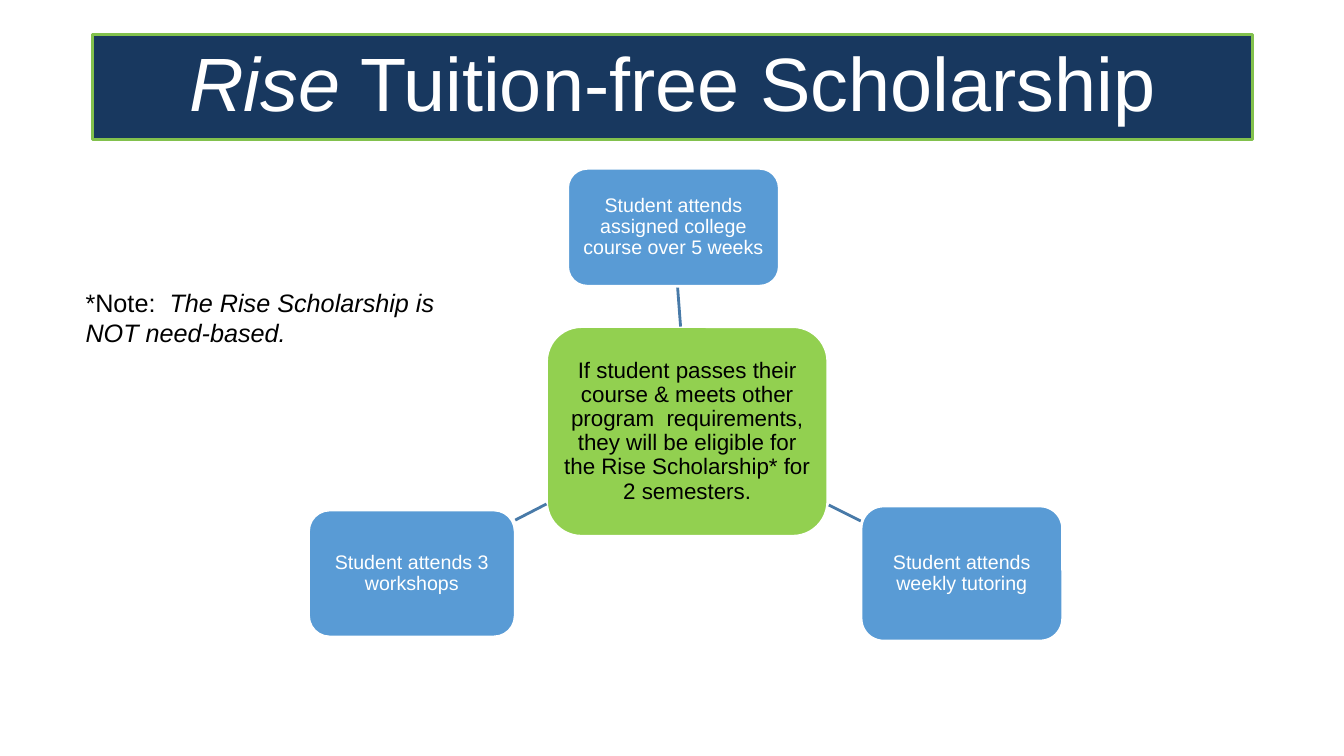
from lxml import etree
from pptx import Presentation
from pptx.dml.color import RGBColor
from pptx.enum.shapes import MSO_CONNECTOR, MSO_SHAPE
from pptx.enum.text import MSO_ANCHOR, MSO_AUTO_SIZE, PP_ALIGN
from pptx.oxml.ns import qn
from pptx.util import Inches, Pt

COLORS = {"navy": "18385F", "leaf": "82C14D", "green": "92D050", "blue": "599BD5",
          "link": "487AA8", "white": "FFFFFF", "black": "000000"}


def rgb(name):
    return RGBColor.from_string(COLORS[name])


def paint(sp, fill, line, width):
    sp.fill.solid()
    sp.fill.fore_color.rgb = rgb(fill)
    sp.line.color.rgb = rgb(line)
    sp.line.width = Pt(width)


def set_frame(tf, inset_x, inset_y, anchor):
    values = {"word_wrap": True, "auto_size": MSO_AUTO_SIZE.NONE, "vertical_anchor": anchor,
              "margin_left": Inches(inset_x), "margin_right": Inches(inset_x),
              "margin_top": Inches(inset_y), "margin_bottom": Inches(inset_y)}
    for name, value in values.items():
        setattr(tf, name, value)


def write(p, runs, size, color, **paragraph_format):
    """Fill a paragraph with (text, italic) runs."""
    for name, value in paragraph_format.items():
        setattr(p, name, value)
    for text, italic in runs:
        r = p.add_run()
        r.text = text
        for name, value in {"name": "Arial", "size": Pt(size), "italic": italic}.items():
            setattr(r.font, name, value)
        r.font.color.rgb = rgb(color)


def add_title(s, box):
    sp = s.shapes.title
    sp.left, sp.top, sp.width, sp.height = map(Inches, box)
    paint(sp, "navy", "leaf", 2.25)
    set_frame(sp.text_frame, 0.1, 0.05, MSO_ANCHOR.MIDDLE)
    write(sp.text_frame.paragraphs[0], [("Rise", True), (" Tuition-free Scholarship", False)],
          54, "white", alignment=PP_ALIGN.CENTER, line_spacing=0.9)


def add_note(s, box):
    tf = s.shapes.add_textbox(*map(Inches, box)).text_frame
    set_frame(tf, 0.1, 0.1, MSO_ANCHOR.TOP)
    write(tf.paragraphs[0], [("*Note:  ", False), ("The Rise Scholarship is", True)], 18, "black")
    write(tf.add_paragraph(), [("NOT need-based.", True)], 18, "black")


def add_node(s, box, text, size, fill, color):
    sp = s.shapes.add_shape(MSO_SHAPE.ROUNDED_RECTANGLE, *map(Inches, box))
    sp.shadow.inherit = False
    paint(sp, fill, "white", 2)
    set_frame(sp.text_frame, 0.04, 0.04, MSO_ANCHOR.MIDDLE)
    write(sp.text_frame.paragraphs[0], [(text, False)], size, color,
          alignment=PP_ALIGN.CENTER, line_spacing=0.9)


def add_link(s, start, end):
    line = s.shapes.add_connector(MSO_CONNECTOR.STRAIGHT, *map(Inches, start + end))
    line.line.color.rgb = rgb("link")
    line.line.width = Pt(2)
    etree.SubElement(line._element.spPr, qn("a:effectLst"))


def add_diagram(s, box):
    """Central outcome with three requirements; places are offsets from the box."""
    x, y, w, h = box
    add_node(s, (x + 2.36, y + 1.57, 2.79, 2.08),
             "If student passes their course & meets other program  requirements, "
             "they will be eligible for the Rise Scholarship* for 2 semesters.",
             16, "green", "black")
    requirements = [
        ("Student attends assigned college course over 5 weeks",
         (2.57, 0, 2.1, 1.17), (3.69, 1.57), (3.66, 1.17)),
        ("Student attends weekly tutoring",
         (w - 2, h - 1.34, 2, 1.34), (5.16, 3.34), (5.48, 3.5)),
        ("Student attends 3 workshops",
         (0, h - 1.3, 2.05, 1.26), (2.36, 3.33), (2.05, 3.49)),
    ]
    for text, (left, top, width, height), start, end in requirements:
        add_link(s, (x + start[0], y + start[1]), (x + end[0], y + end[1]))
        add_node(s, (x + left, y + top, width, height), text, 14, "blue", "white")


def main():
    prs = Presentation()
    prs.slide_width, prs.slide_height = Inches(13.33), Inches(7.5)
    s = prs.slides.add_slide(prs.slide_layouts[5])
    add_diagram(s, (3.06, 1.67, 7.48, 4.69))
    add_note(s, (0.75, 2.75, 4.14, 0.81))
    add_title(s, (0.92, 0.34, 11.5, 1.04))
    prs.save("out.pptx")


if __name__ == "__main__":
    main()
